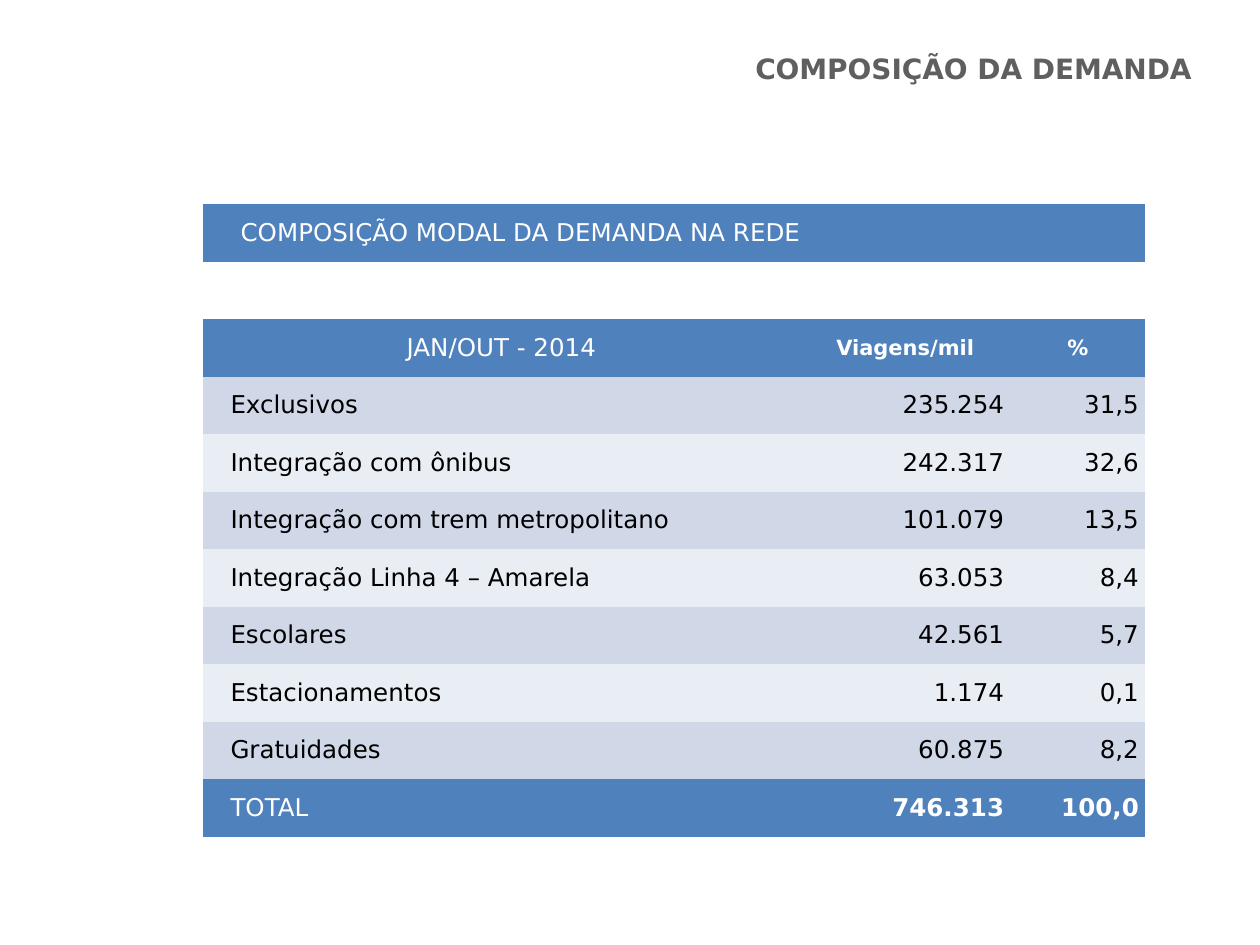
from pptx import Presentation
from pptx.dml.color import RGBColor
from pptx.enum.text import MSO_ANCHOR, PP_ALIGN
from pptx.oxml.ns import qn
from pptx.util import Inches, Pt

LEFT, CENTER, RIGHT = PP_ALIGN.LEFT, PP_ALIGN.CENTER, PP_ALIGN.RIGHT
MIDDLE = MSO_ANCHOR.MIDDLE
FONT = "DejaVu Sans"
PLAIN_TABLE_STYLE = "{2D5ABB26-0587-4C30-8999-92F81FD0307C}"
COLORS = {
    "title": "5F5F5F", "header": "4F81BD", "band_dark": "D0D8E8",
    "band_light": "E9EDF4", "white": "FFFFFF", "black": "000000",
}

# Content
TITLE = "COMPOSIÇÃO DA DEMANDA"
TABLE_HEADING = "COMPOSIÇÃO MODAL DA DEMANDA NA REDE"
COLUMN_HEADINGS = ("JAN/OUT - 2014", "Viagens/mil", "%")
DEMAND = [
    ("Exclusivos", "235.254", "31,5"),
    ("Integração com ônibus", "242.317", "32,6"),
    ("Integração com trem metropolitano", "101.079", "13,5"),
    ("Integração Linha 4 – Amarela", "63.053", "8,4"),
    ("Escolares", "42.561", "5,7"),
    ("Estacionamentos", "1.174", "0,1"),
    ("Gratuidades", "60.875", "8,2"),
]
TOTAL = ("TOTAL", "746.313", "100,0")

# Layout
COLUMN_WIDTHS = (4.74, 1.67, 1.07)
TABLE_LEFT, TABLE_TOP, TABLE_HEIGHT = 1.61, 1.62, 5.02
FIRST_BODY_ROW = 3
ROW_COUNT = FIRST_BODY_ROW + len(DEMAND) + 1
CELL_MARGIN, LABEL_MARGIN, HEADING_MARGIN = 0.05, 0.22, 0.3


def color(name):
    return RGBColor.from_string(COLORS[name])


def style_paragraph(para, size, color_name, align, bold=False):
    para.alignment = align
    para.font.name = FONT
    para.font.size = Pt(size)
    para.font.bold = bold
    para.font.color.rgb = color(color_name)


def fill_cell(cell, text, fill, color_name, align=LEFT, size=14, bold=False,
              margin=CELL_MARGIN):
    cell.fill.solid()
    cell.fill.fore_color.rgb = color(fill)
    cell.vertical_anchor = MIDDLE
    cell.margin_left, cell.margin_right = Inches(margin), Inches(CELL_MARGIN)
    cell.margin_top = cell.margin_bottom = 0
    cell.text = text
    style_paragraph(cell.text_frame.paragraphs[0], size, color_name, align, bold)


def fill_body_row(table, row, values, fill, color_name, bold_numbers=False):
    label, *numbers = values
    fill_cell(table.cell(row, 0), label, fill, color_name, margin=LABEL_MARGIN)
    for column, number in enumerate(numbers, 1):
        fill_cell(table.cell(row, column), number, fill, color_name, RIGHT,
                  bold=bold_numbers)


def add_title(page):
    title = page.shapes.title
    title.left, title.top = Inches(0.98), Inches(0.36)
    title.width, title.height = Inches(8.58), Inches(0.37)
    title.text_frame.text = TITLE
    title.text_frame.vertical_anchor = MIDDLE
    style_paragraph(title.text_frame.paragraphs[0], 16, "title", RIGHT, True)


def add_demand_table(page):
    frame = page.shapes.add_table(
        ROW_COUNT, len(COLUMN_WIDTHS), Inches(TABLE_LEFT), Inches(TABLE_TOP),
        Inches(sum(COLUMN_WIDTHS)), Inches(TABLE_HEIGHT))
    table = frame.table
    table.first_row = table.horz_banding = False
    frame._element.find(".//" + qn("a:tableStyleId")).text = PLAIN_TABLE_STYLE
    for column, width in zip(table.columns, COLUMN_WIDTHS):
        column.width = Inches(width)
    for row in table.rows:
        row.height = Inches(TABLE_HEIGHT / ROW_COUNT)

    # Heading band and the empty row below it
    for row in range(2):
        table.cell(row, 0).merge(table.cell(row, len(COLUMN_WIDTHS) - 1))
    fill_cell(table.cell(0, 0), TABLE_HEADING, "header", "white",
              margin=HEADING_MARGIN)
    table.cell(1, 0).fill.background()

    # Column headings
    for column, heading in enumerate(COLUMN_HEADINGS):
        is_number = column > 0
        fill_cell(table.cell(2, column), heading, "header", "white", CENTER,
                  size=12 if is_number else 14, bold=is_number)

    # Banded body and total
    for index, values in enumerate(DEMAND):
        fill = "band_light" if index % 2 else "band_dark"
        fill_body_row(table, FIRST_BODY_ROW + index, values, fill, "black")
    fill_body_row(table, ROW_COUNT - 1, TOTAL, "header", "white", True)


def main():
    deck = Presentation()
    deck.slide_width, deck.slide_height = Inches(10), Inches(7.5)
    page = deck.slides.add_slide(deck.slide_layouts.get_by_name("Title Only"))
    add_title(page)
    add_demand_table(page)
    deck.save("out.pptx")


if __name__ == "__main__":
    main()
